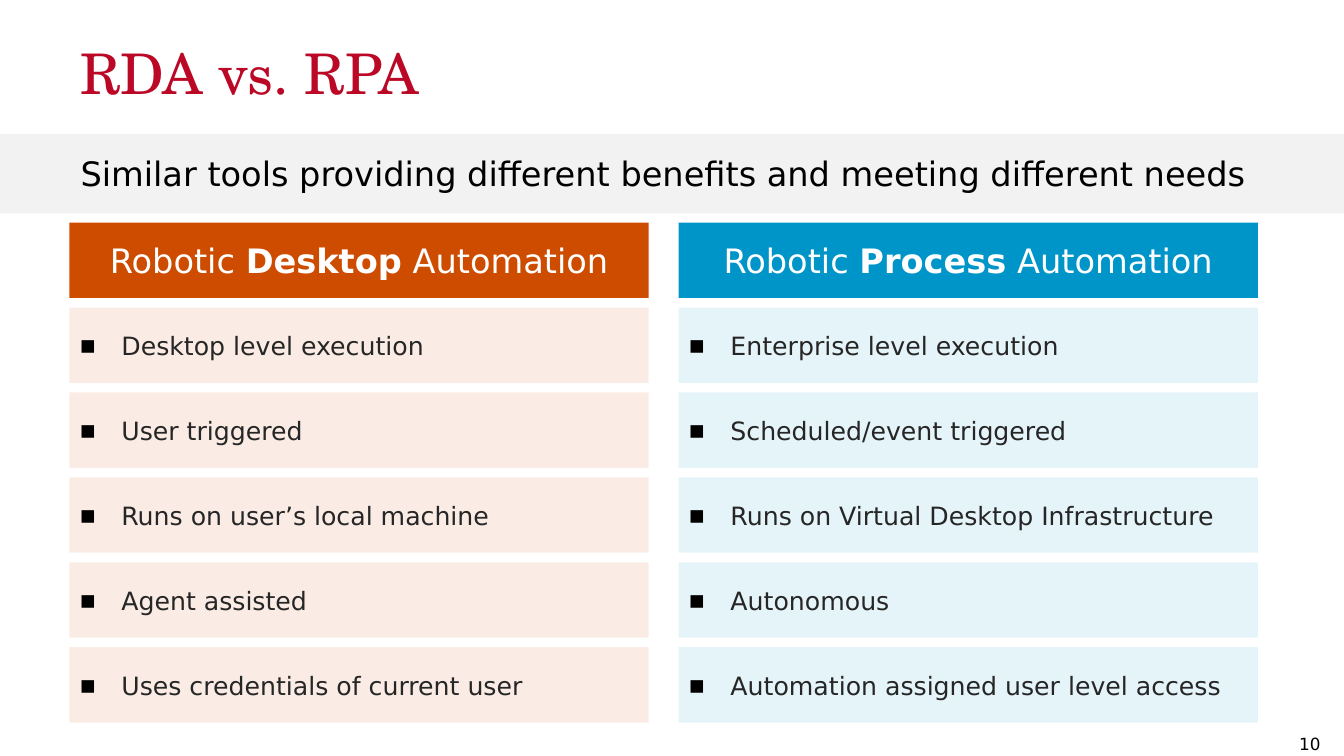
import pptx
import pptx.util
import pptx.dml.color
import pptx.enum.shapes
import pptx.enum.text
import pptx.oxml
import pptx.oxml.ns

Cm, Pt = pptx.util.Cm, pptx.util.Pt
RGBColor = pptx.dml.color.RGBColor
ANCHOR = pptx.enum.text.MSO_ANCHOR
ALIGN = pptx.enum.text.PP_ALIGN

# Content
TITLE = "RDA vs. RPA"
SUBTITLE = "Similar tools providing different benefits and meeting different needs"
PAGE_NUMBER = "10"
ORANGE = RGBColor(0xCE, 0x4C, 0x00)
BLUE = RGBColor(0x00, 0x95, 0xC8)
COLUMNS = [
    ("Desktop", ORANGE, [
        "Desktop level execution",
        "User triggered",
        "Runs on user’s local machine",
        "Agent assisted",
        "Uses credentials of current user",
    ]),
    ("Process", BLUE, [
        "Enterprise level execution",
        "Scheduled/event triggered",
        "Runs on Virtual Desktop Infrastructure",
        "Autonomous",
        "Automation assigned user level access",
    ]),
]

# Style
RED = RGBColor(0xBB, 0x08, 0x26)
GREY = RGBColor(0xF2, 0xF2, 0xF2)
BLACK = RGBColor(0x00, 0x00, 0x00)
WHITE = RGBColor(0xFF, 0xFF, 0xFF)
DARK = RGBColor(0x26, 0x26, 0x26)
BODY_FONT, TITLE_FONT = "DejaVu Sans", "TeX Gyre Schola"

# Grid, in centimetres
PAGE_WIDTH, PAGE_HEIGHT = 33.87, 19.05
GRID_LEFT, GRID_TOP = 1.75, 5.61
CELL_WIDTH, CELL_HEIGHT = 14.6, 1.9
COLUMN_STEP, ROW_STEP = 15.35, 2.14
BULLET_INDENT = Cm(1.06)


def style(para, size, color, name=BODY_FONT):
    para.font.size = Pt(size)
    para.font.color.rgb = color
    para.font.name = name


def add_box(page, left, top, width, height, color, alpha=100):
    box = page.shapes.add_shape(pptx.enum.shapes.MSO_SHAPE.RECTANGLE,
                                Cm(left), Cm(top), Cm(width), Cm(height))
    box.shadow.inherit = False
    box.line.fill.background()
    box.fill.solid()
    box.fill.fore_color.rgb = color
    if alpha < 100:
        tint = box.fill._xPr.find(".//" + pptx.oxml.ns.qn("a:srgbClr"))
        tint.append(pptx.oxml.parse_xml(
            f'<a:alpha {pptx.oxml.ns.nsdecls("a")} val="{alpha * 1000}"/>'))
    box.text_frame.word_wrap = True
    box.text_frame.vertical_anchor = ANCHOR.MIDDLE
    return box


def add_text(page, left, top, width, height, text, size):
    box = page.shapes.add_textbox(Cm(left), Cm(top), Cm(width), Cm(height))
    box.text_frame.word_wrap = True
    para = box.text_frame.paragraphs[0]
    para.text = text
    style(para, size, BLACK)
    return box.text_frame


def clear_margins(frame):
    frame.margin_left = frame.margin_right = 0
    frame.margin_top = frame.margin_bottom = 0


def add_bullet(para):
    properties = para._p.get_or_add_pPr()
    properties.set("marL", str(BULLET_INDENT))
    properties.set("indent", str(-BULLET_INDENT))
    names = pptx.oxml.ns.nsdecls("a")
    for mark in (f'<a:buClr {names}><a:srgbClr val="{BLACK}"/></a:buClr>',
                 f'<a:buFont {names} typeface="{BODY_FONT}"/>',
                 f'<a:buChar {names} char="▪"/>'):
        properties.append(pptx.oxml.parse_xml(mark))


def add_header(page, left, keyword, color):
    box = add_box(page, left, GRID_TOP, CELL_WIDTH, CELL_HEIGHT, color)
    para = box.text_frame.paragraphs[0]
    para.alignment = ALIGN.CENTER
    for text in ("Robotic ", keyword, " Automation"):
        span = para.add_run()
        span.text = text
        span.font.bold = text == keyword
    style(para, 24, WHITE)


def add_row(page, left, top, text, color):
    box = add_box(page, left, top, CELL_WIDTH, CELL_HEIGHT, color, alpha=10)
    para = box.text_frame.paragraphs[0]
    para.text = text
    para.alignment = ALIGN.LEFT
    add_bullet(para)
    style(para, 18, DARK)


def main():
    deck = pptx.Presentation()
    deck.slide_width, deck.slide_height = Cm(PAGE_WIDTH), Cm(PAGE_HEIGHT)
    page = deck.slides.add_slide(deck.slide_layouts[5])

    # Title
    title = page.shapes.title
    title.left, title.top = Cm(2.03), Cm(0.89)
    title.width, title.height = Cm(30.48), Cm(3.18)
    frame = title.text_frame
    frame.text = TITLE
    frame.auto_size = pptx.enum.text.MSO_AUTO_SIZE.NONE
    frame.vertical_anchor = ANCHOR.TOP
    clear_margins(frame)
    frame.paragraphs[0].alignment = ALIGN.LEFT
    frame.paragraphs[0].line_spacing = 1.05
    style(frame.paragraphs[0], 40, RED, TITLE_FONT)

    # Subtitle on its band
    add_box(page, 0, 3.38, PAGE_WIDTH, 2, GREY)
    frame = add_text(page, 2.03, 3.73, 31.83, 1.24, SUBTITLE, 24)
    frame.vertical_anchor = ANCHOR.MIDDLE
    clear_margins(frame)

    # Comparison columns
    for column, (keyword, color, rows) in enumerate(COLUMNS):
        left = GRID_LEFT + column * COLUMN_STEP
        add_header(page, left, keyword, color)
        for row, text in enumerate(rows, start=1):
            add_row(page, left, GRID_TOP + row * ROW_STEP, text, color)

    # Page number
    add_text(page, 32.49, 18.36, 1.38, 0.69, PAGE_NUMBER, 12)

    deck.save("out.pptx")


if __name__ == "__main__":
    main()
